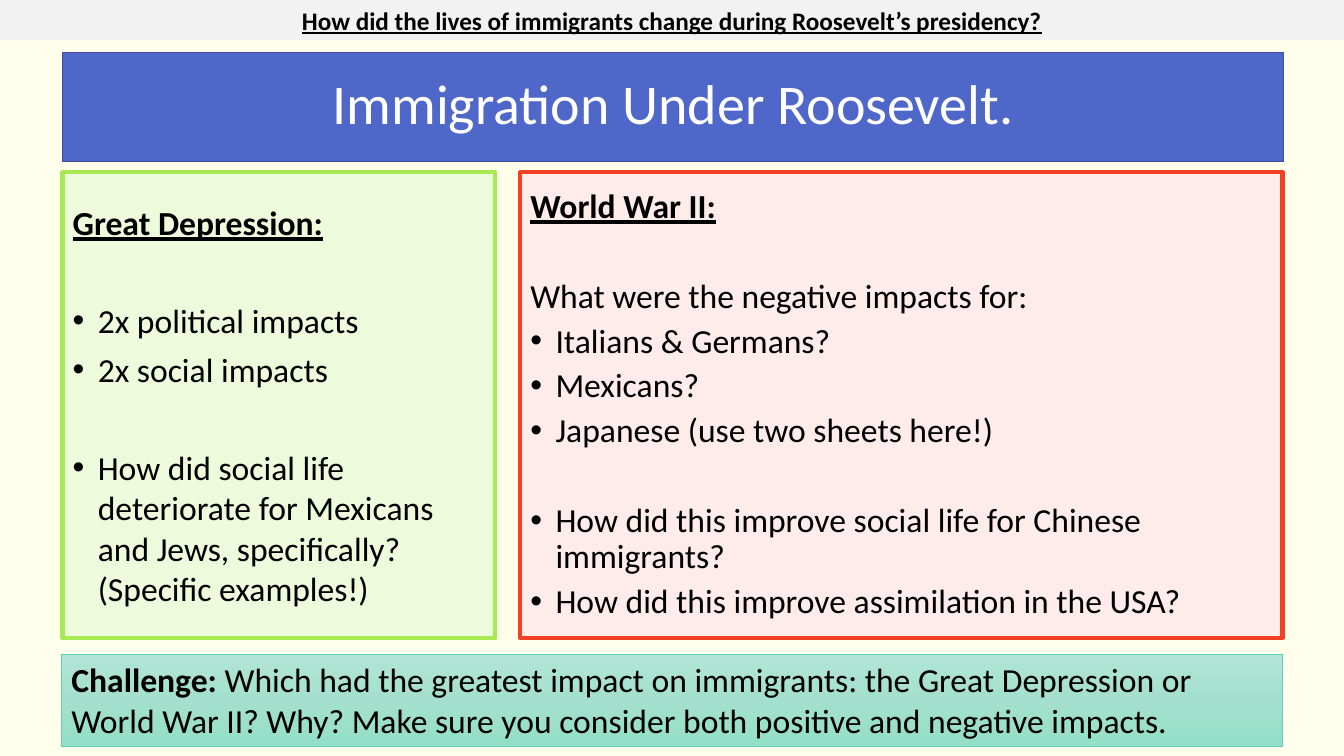
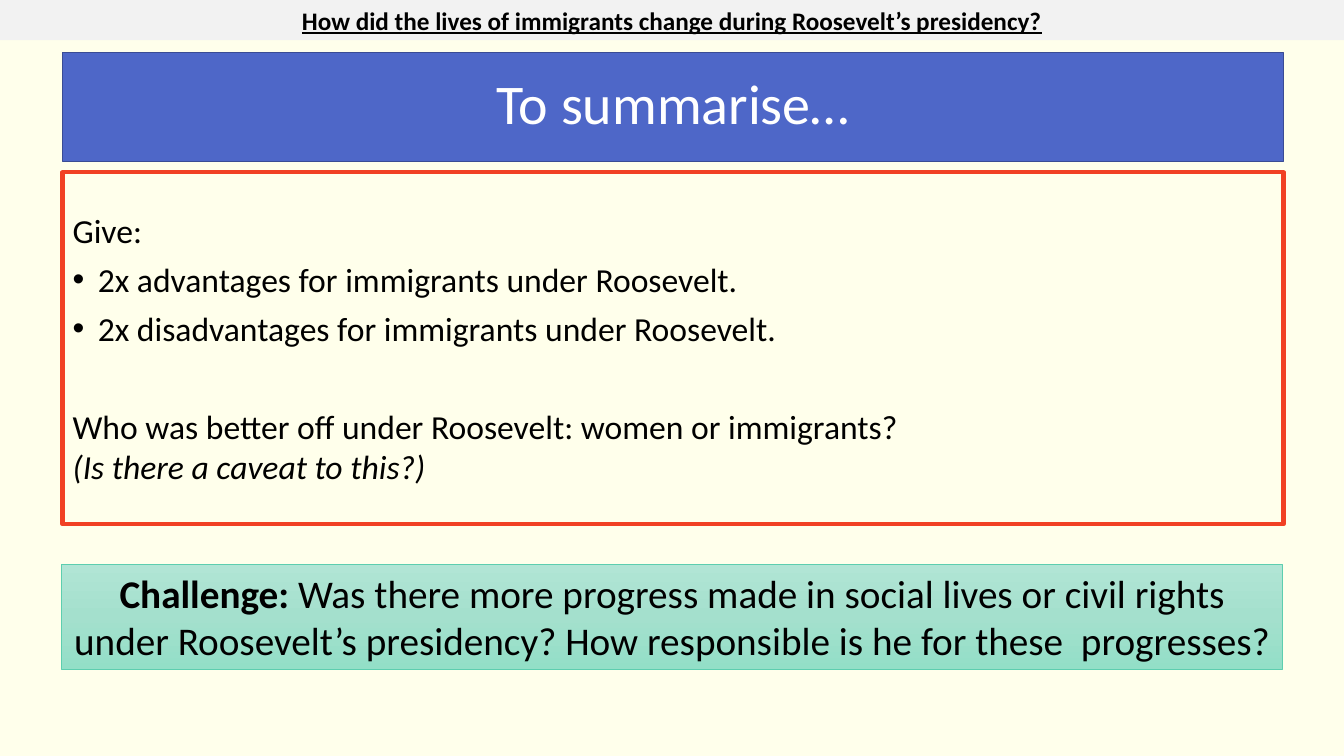
"""Build two lesson slides about immigration under Roosevelt."""
from copy import deepcopy
from dataclasses import dataclass
from typing import Optional

from lxml.etree import SubElement
from pptx import Presentation
from pptx.dml.color import RGBColor
from pptx.enum.shapes import MSO_SHAPE
from pptx.enum.text import MSO_ANCHOR, MSO_AUTO_SIZE, PP_ALIGN
from pptx.oxml.ns import qn
from pptx.util import Inches, Pt

COLOURS = {
    "page": "FFFFEB", "text": "000000", "white": "FFFFFF", "header": "F2F2F2",
    "title": "4E67C8", "title line": "3A4C94",
    "green": "EDFBDC", "green line": "A7EA52",
    "red": "FDECE9", "red line": "F14124",
    "mint top": "B1E5D5", "mint middle": "A4E0CD", "mint bottom": "93DFC7",
    "mint line": "5DCEAF",
}
FONT = "Calibri"
QUESTION = "How did the lives of immigrants change during Roosevelt’s presidency?"
PAGE_WIDTH = 13.33
LEFT, WIDTH = 0.62, 12.11
PANEL_TOP = 1.71
BODY_SIZE = 24
SPACE_AFTER = 6
LINE_HEIGHT = 1.22


@dataclass(frozen=True)
class Span:
    text: str
    bold: bool = False
    underline: bool = False
    italic: bool = False
    new_line: bool = False


@dataclass(frozen=True)
class Para:
    spans: tuple[Span, ...]
    bullet: bool = False
    gap_before: bool = False


@dataclass(frozen=True)
class Panel:
    left: float
    width: float
    height: float
    fill: Optional[str]
    line: str
    paras: tuple[Para, ...]
    line_spacing: float = 1.0


@dataclass(frozen=True)
class Challenge:
    text: str
    top: float
    height: float
    size: int
    align: PP_ALIGN


@dataclass(frozen=True)
class Page:
    title: str
    layout: int
    panels: tuple[Panel, ...]
    challenge: Challenge


def plain(text: str, gap_before: bool = False) -> Para:
    return Para((Span(text),), gap_before=gap_before)


def bullet(text: str, gap_before: bool = False) -> Para:
    return Para((Span(text),), True, gap_before)


def heading(text: str) -> Para:
    return Para((Span(text, bold=True, underline=True),))


PAGES = (
    Page(
        "Immigration Under Roosevelt.", 3,
        (
            Panel(LEFT, 4.29, 4.62, "green", "green line", (
                heading("Great Depression:"),
                bullet("2x political impacts", gap_before=True),
                bullet("2x social impacts"),
                bullet("How did social life deteriorate for Mexicans and Jews, "
                       "specifically? (Specific examples!)", gap_before=True),
            )),
            Panel(5.16, 7.56, 4.62, "red", "red line", (
                heading("World War II:"),
                plain("What were the negative impacts for:", gap_before=True),
                bullet("Italians & Germans?"),
                bullet("Mexicans?"),
                bullet("Japanese (use two sheets here!)"),
                bullet("How did this improve social life for Chinese immigrants?",
                       gap_before=True),
                bullet("How did this improve assimilation in the USA?"),
            ), line_spacing=0.9),
        ),
        Challenge("Which had the greatest impact on immigrants: the Great Depression or "
                  "World War II? Why? Make sure you consider both positive and negative "
                  "impacts.", 6.49, 0.91, 24, PP_ALIGN.LEFT),
    ),
    Page(
        "To summarise…", 1,
        (
            Panel(LEFT, WIDTH, 3.49, None, "red line", (
                plain("Give:"),
                bullet("2x advantages for immigrants under Roosevelt."),
                bullet("2x disadvantages for immigrants under Roosevelt."),
                Para((
                    Span("Who was better off under Roosevelt: women or immigrants?"),
                    Span("(Is there a caveat to this?)", italic=True, new_line=True),
                ), gap_before=True),
            )),
        ),
        Challenge("Was there more progress made in social lives or civil rights under "
                  "Roosevelt’s presidency? How responsible is he for these  progresses?",
                  5.6, 1.04, 28, PP_ALIGN.CENTER),
    ),
)


def colour(name: str) -> RGBColor:
    return RGBColor.from_string(COLOURS[name])


def place(box, left: float, top: float, width: float, height: float) -> None:
    box.left, box.top = Inches(left), Inches(top)
    box.width, box.height = Inches(width), Inches(height)


def paint(box, fill: Optional[str], line: Optional[str], weight: float = 1) -> None:
    if fill:
        box.fill.solid()
        box.fill.fore_color.rgb = colour(fill)
    else:
        box.fill.background()
    if line:
        box.line.color.rgb = colour(line)
        box.line.width = Pt(weight)
    else:
        box.line.fill.background()


def paint_mint(box) -> None:
    box.fill.gradient()
    box.fill.gradient_angle = 270
    stop_list = box._element.find(".//" + qn("a:gsLst"))
    middle = deepcopy(stop_list[0])
    middle.set("pos", "50000")
    stop_list.insert(1, middle)
    for stop, name in zip(box.fill.gradient_stops, ("mint top", "mint middle", "mint bottom")):
        stop.color.rgb = colour(name)
    box.line.color.rgb = colour("mint line")
    box.line.width = Pt(0.5)


def add_span(para, span: Span, size: int, colour_name: str = "text") -> None:
    if span.new_line:
        para.add_line_break()
    run = para.add_run()
    run.text = span.text
    font = run.font
    font.name, font.size = FONT, Pt(size)
    font.color.rgb = colour(colour_name)
    font.bold, font.underline, font.italic = span.bold, span.underline, span.italic


def set_bullet(para, shown: bool) -> None:
    properties = para._p.get_or_add_pPr()
    indent = Inches(0.25) if shown else 0
    properties.set("marL", str(indent))
    properties.set("indent", str(-indent))
    if shown:
        SubElement(properties, qn("a:buFont")).set("typeface", "Arial")
        SubElement(properties, qn("a:buChar")).set("char", "•")
    else:
        SubElement(properties, qn("a:buNone"))


def fill_title(box, text: str) -> None:
    place(box, LEFT, 0.52, WIDTH, 1.08)
    paint(box, "title", "title line")
    frame = box.text_frame
    frame.auto_size = MSO_AUTO_SIZE.NONE
    frame.vertical_anchor = MSO_ANCHOR.MIDDLE
    para = frame.paragraphs[0]
    para.alignment = PP_ALIGN.CENTER
    para.line_spacing = 0.9
    add_span(para, Span(text), 40, "white")


def fill_panel(box, panel: Panel) -> None:
    place(box, panel.left, PANEL_TOP, panel.width, panel.height)
    paint(box, panel.fill, panel.line, 3)
    frame = box.text_frame
    frame.auto_size = MSO_AUTO_SIZE.NONE
    frame.vertical_anchor = MSO_ANCHOR.MIDDLE
    gap = round(BODY_SIZE * LINE_HEIGHT * panel.line_spacing + SPACE_AFTER, 1)
    for index, item in enumerate(panel.paras):
        para = frame.add_paragraph() if index else frame.paragraphs[0]
        set_bullet(para, item.bullet)
        para.alignment = PP_ALIGN.LEFT
        para.line_spacing = panel.line_spacing
        para.space_before = Pt(gap if item.gap_before else 0)
        para.space_after = Pt(SPACE_AFTER)
        for span in item.spans:
            add_span(para, span, BODY_SIZE)


def add_band(slide, left: float, top: float, width: float, height: float,
             spans: tuple[Span, ...], size: int, align: PP_ALIGN):
    box = slide.shapes.add_shape(MSO_SHAPE.RECTANGLE, Inches(left), Inches(top),
                                 Inches(width), Inches(height))
    box.shadow.inherit = False
    frame = box.text_frame
    frame.word_wrap = True
    frame.auto_size = MSO_AUTO_SIZE.SHAPE_TO_FIT_TEXT
    frame.vertical_anchor = MSO_ANCHOR.TOP
    para = frame.paragraphs[0]
    para.alignment = align
    for span in spans:
        add_span(para, span, size)
    return box


def add_page(deck, page: Page) -> None:
    slide = deck.slides.add_slide(deck.slide_layouts[page.layout])
    title, *bodies = slide.placeholders
    fill_title(title, page.title)
    for box, panel in zip(bodies, page.panels):
        fill_panel(box, panel)
    header = add_band(slide, 0, 0, PAGE_WIDTH, 0.4,
                      (Span(QUESTION, bold=True, underline=True),), 18, PP_ALIGN.CENTER)
    paint(header, "header", None)
    challenge = page.challenge
    band = add_band(slide, 0.61, challenge.top, WIDTH, challenge.height,
                    (Span("Challenge: ", bold=True), Span(challenge.text)),
                    challenge.size, challenge.align)
    paint_mint(band)


def main() -> None:
    deck = Presentation()
    deck.slide_width, deck.slide_height = Inches(PAGE_WIDTH), Inches(7.5)
    background = deck.slide_master.background.fill
    background.solid()
    background.fore_color.rgb = colour("page")
    for page in PAGES:
        add_page(deck, page)
    deck.save("out.pptx")


if __name__ == "__main__":
    main()
